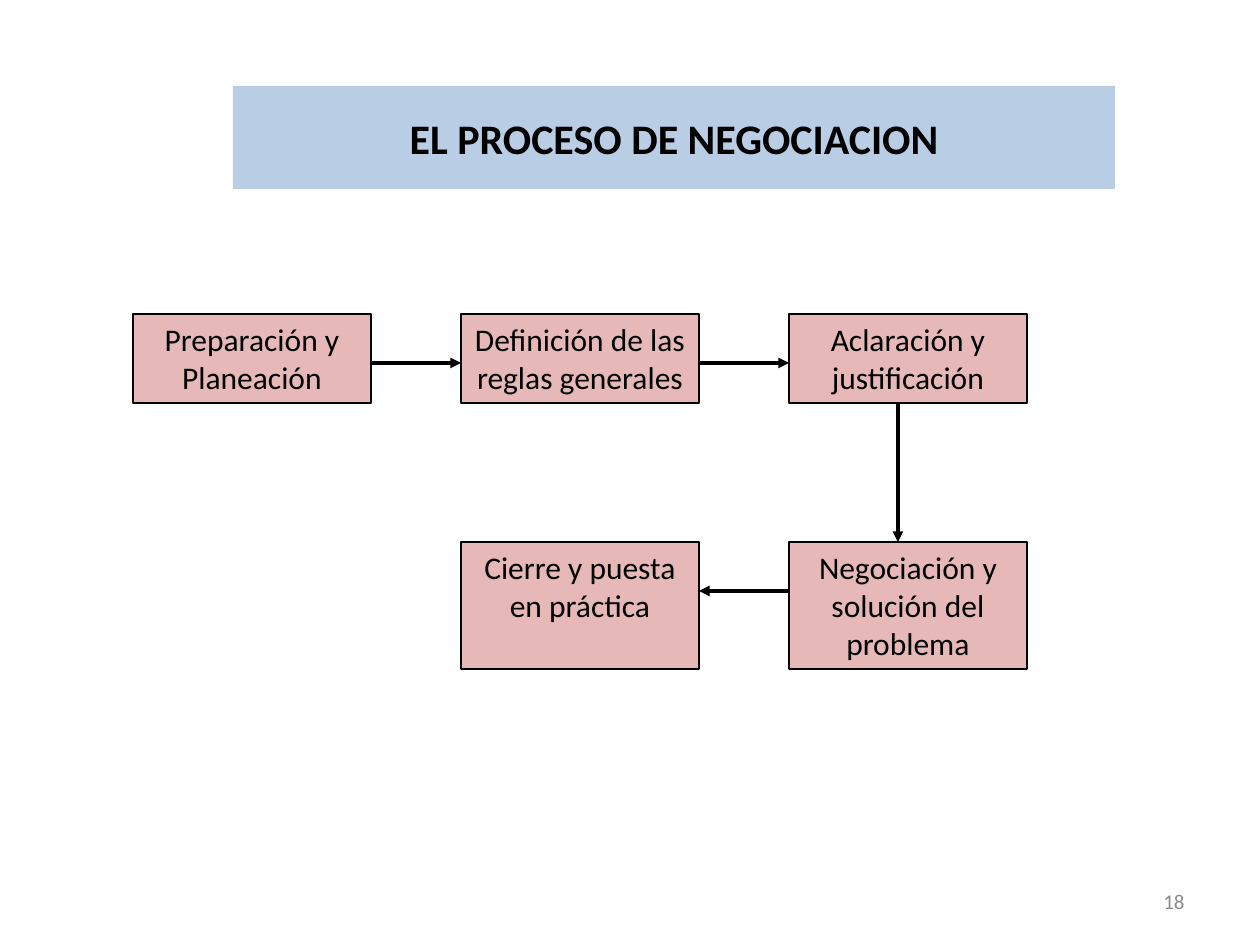
from lxml import etree
from pptx import Presentation
from pptx.dml.color import RGBColor
from pptx.enum.shapes import MSO_CONNECTOR, MSO_SHAPE
from pptx.enum.text import MSO_ANCHOR, PP_ALIGN
from pptx.oxml.ns import qn
from pptx.util import Emu, Pt

STRAIGHT = MSO_CONNECTOR.STRAIGHT
RECTANGLE = MSO_SHAPE.RECTANGLE
TOP, MIDDLE = MSO_ANCHOR.TOP, MSO_ANCHOR.MIDDLE
CENTER, RIGHT = PP_ALIGN.CENTER, PP_ALIGN.RIGHT

PX_PER_INCH = 126
FONT = "Calibri"
COLORS = {
    "banner": "B9CDE5",
    "step": "E6B9B8",
    "ink": "000000",
    "page_number": "8C8C8C",
}

STEP_WIDTH = 238
COLUMN_PITCH = 328
ROW_PITCH = 228
ROW_HEIGHTS = (89, 127)
ARROW_DROP = 49     # from the top of a step to its horizontal arrow
ARROW_INSET = 109   # from the left of a step to its vertical arrow

# Column, row and paragraphs of each step, in process order
STEPS = [
    (0, 0, ["Preparación y", "Planeación"]),
    (1, 0, ["Definición de las reglas generales"]),
    (2, 0, ["Aclaración y justificación"]),
    (2, 1, ["Negociación y solución del problema"]),
    (1, 1, ["Cierre y puesta en práctica"]),
]


def px(length):
    return Emu(round(length * 914400 / PX_PER_INCH))


def color(name):
    return RGBColor.from_string(COLORS[name])


def write(shape, paragraphs, size, ink="ink", align=CENTER, anchor=TOP, bold=False):
    frame = shape.text_frame
    frame.word_wrap = True
    frame.vertical_anchor = anchor
    frame.text = "\n".join(paragraphs)
    for paragraph in frame.paragraphs:
        paragraph.alignment = align
        paragraph.font.name = FONT
        paragraph.font.size = Pt(size)
        paragraph.font.bold = bold
        paragraph.font.color.rgb = color(ink)


def add_rectangle(slide, box, fill):
    rectangle = slide.shapes.add_shape(RECTANGLE, *map(px, box))
    rectangle.shadow.inherit = False
    rectangle.fill.solid()
    rectangle.fill.fore_color.rgb = color(fill)
    rectangle.line.fill.background()
    return rectangle


def add_arrow(slide, start, end):
    arrow = slide.shapes.add_connector(STRAIGHT, *map(px, (*start, *end)))
    arrow.line.color.rgb = color("ink")
    arrow.line.width = Pt(2)
    etree.SubElement(arrow.line._get_or_add_ln(), qn("a:tailEnd"), type="triangle")
    etree.SubElement(arrow._element.spPr, qn("a:effectLst"))


def add_banner(slide, box):
    banner = add_rectangle(slide, box, "banner")
    write(banner, ["EL PROCESO DE NEGOCIACION"], 24, anchor=MIDDLE, bold=True)


def add_process(slide, left, top):
    """Draw the steps on a grid and join each one to the next."""
    boxes = []
    for column, row, paragraphs in STEPS:
        box = (left + column * COLUMN_PITCH, top + row * ROW_PITCH,
               STEP_WIDTH, ROW_HEIGHTS[row])
        step = add_rectangle(slide, box, "step")
        step.line.color.rgb = color("ink")
        step.line.width = Pt(0.75)
        write(step, paragraphs, 18)
        boxes.append(box)

    for (x, y, width, height), (next_x, next_y, _, _) in zip(boxes, boxes[1:]):
        if next_x == x:
            start = (x + ARROW_INSET, y + height)
            end = (x + ARROW_INSET, next_y)
        elif next_x > x:
            start = (x + width, y + ARROW_DROP)
            end = (next_x, y + ARROW_DROP)
        else:
            start = (x, y + ARROW_DROP)
            end = (next_x + width, y + ARROW_DROP)
        add_arrow(slide, start, end)


def add_page_number(slide, box):
    page_number = slide.shapes.add_textbox(*map(px, box))
    write(page_number, ["18"], 12, "page_number", RIGHT, MIDDLE)


def main():
    presentation = Presentation()
    presentation.slide_width = px(1260)
    presentation.slide_height = px(945)
    slide = presentation.slides.add_slide(presentation.slide_layouts[6])
    add_banner(slide, (233, 86, 882, 103))
    add_process(slide, 133, 314)
    add_page_number(slide, (903, 876, 294, 50))
    presentation.save("out.pptx")


if __name__ == "__main__":
    main()
